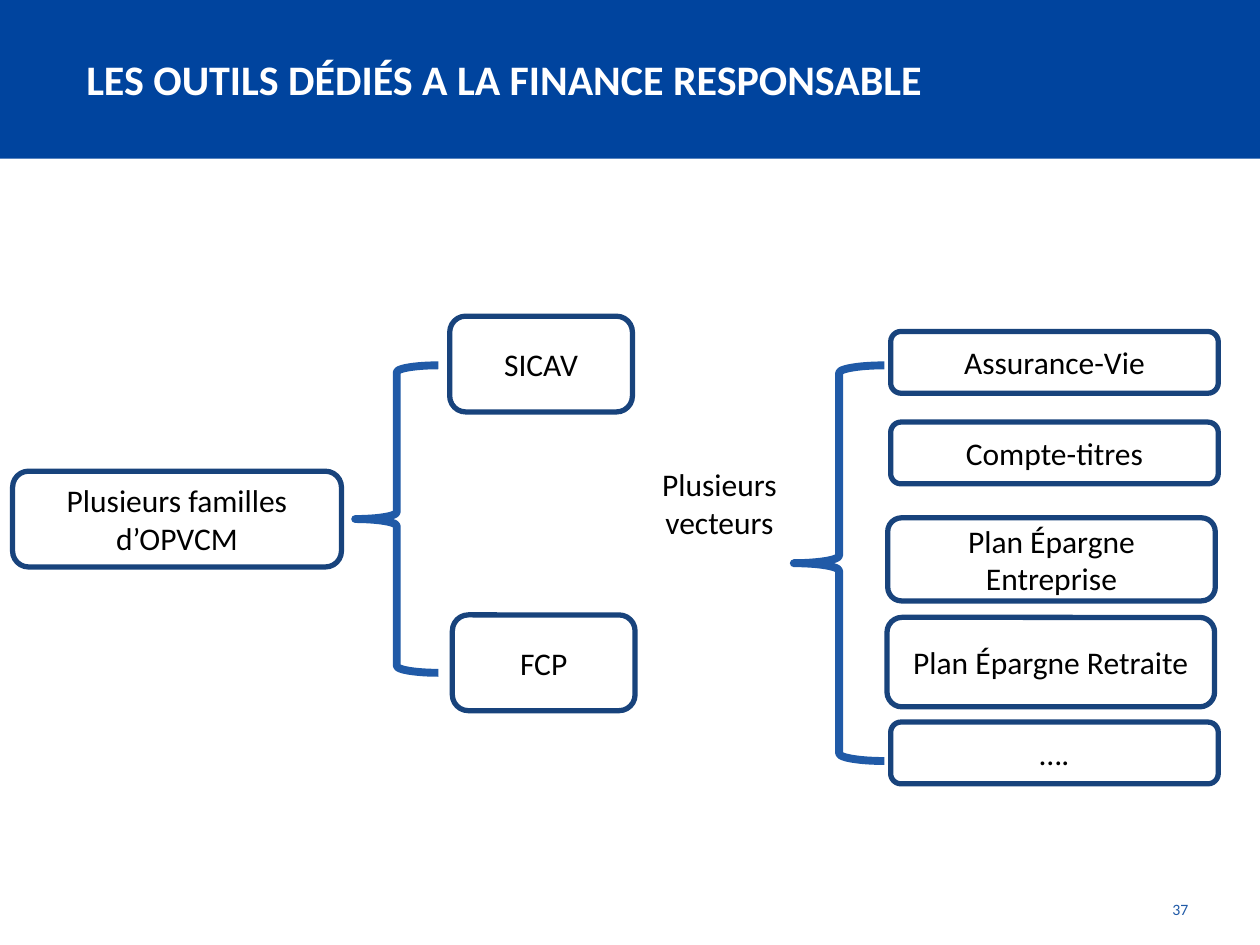
from pptx import Presentation
from pptx import util as u
from pptx.dml.color import RGBColor
from pptx.enum import shapes, text

BLUE = RGBColor(0x00, 0x44, 0x9E)
NAVY = RGBColor(0x18, 0x43, 0x7C)
MID = RGBColor(0x20, 0x5A, 0xA7)
WHITE = RGBColor(0xFF, 0xFF, 0xFF)
BLACK = RGBColor(0x00, 0x00, 0x00)

KIND = shapes.MSO_SHAPE
ALIGN = text.PP_ALIGN
ANCHOR = text.MSO_ANCHOR


def write(shape, words, size=18, color=BLACK, bold=False,
          align=ALIGN.CENTER, anchor=ANCHOR.MIDDLE, left=7.2):
    frame = shape.text_frame
    frame.word_wrap = True
    frame.vertical_anchor = anchor
    frame.margin_left = u.Pt(left)
    para = frame.paragraphs[0]
    para.alignment = align
    run = para.add_run()
    run.text = words
    font = run.font
    font.name = "Calibri"
    font.size = u.Pt(size)
    font.bold = bold
    font.color.rgb = color


def draw(slide, kind, area, fill=None, line=None, width=3):
    shape = slide.shapes.add_shape(kind, *map(u.Pt, area))
    shape.shadow.inherit = False
    if fill is None:
        shape.fill.background()
    else:
        shape.fill.solid()
        shape.fill.fore_color.rgb = fill
    if line is None:
        shape.line.fill.background()
    else:
        shape.line.color.rgb = line
        shape.line.width = u.Pt(width)
    return shape


def label(slide, words, area, **style):
    write(slide.shapes.add_textbox(*map(u.Pt, area)), words, **style)


def box(slide, words, *area):
    write(draw(slide, KIND.ROUNDED_RECTANGLE, area, WHITE, NAVY), words)


def brace(slide, *area):
    draw(slide, KIND.LEFT_BRACE, area, line=MID, width=4.5)


def header(slide):
    draw(slide, KIND.RECTANGLE, (0, 0, 720, 90.7), BLUE)
    label(slide, "LES OUTILS DÉDIÉS A LA FINANCE RESPONSABLE",
          (36.7, 0, 674.6, 90), size=24, color=WHITE, bold=True,
          align=ALIGN.LEFT, left=12.6)


def funds(slide):
    box(slide, "Plusieurs familles d’OPVCM", 7.2, 269.3, 187.9, 54.7)
    brace(slide, 203, 208.8, 47.5, 175.7)
    box(slide, "SICAV", 257, 180.7, 104.4, 54.7)
    box(slide, "FCP", 258.5, 351.4, 104.4, 54.7)


def plans(slide):
    label(slide, "Plusieurs vecteurs", (362.9, 262.1, 96.5, 51.1),
          anchor=ANCHOR.TOP)
    brace(slide, 453.6, 208.8, 51.8, 226.1)
    for words, left, top, high in (
        ("Assurance-Vie", 509, 189.4, 35.3),
        ("Compte-titres", 509, 241.2, 35.3),
        ("Plan Épargne Entreprise", 507.3, 295.9, 47.5),
        ("Plan Épargne Retraite", 506.9, 352.8, 51.1),
        ("….", 509, 412.6, 35.3),
    ):
        box(slide, words, left, top, 187.2, high)


def main():
    deck = Presentation()
    deck.slide_width, deck.slide_height = u.Pt(720), u.Pt(540)
    slide = deck.slides.add_slide(deck.slide_layouts[6])
    header(slide)
    funds(slide)
    plans(slide)
    label(slide, "37", (643.7, 510.5, 42.5, 28.1), size=9, color=MID,
          align=ALIGN.RIGHT, anchor=ANCHOR.TOP)
    deck.save("out.pptx")


if __name__ == "__main__":
    main()
